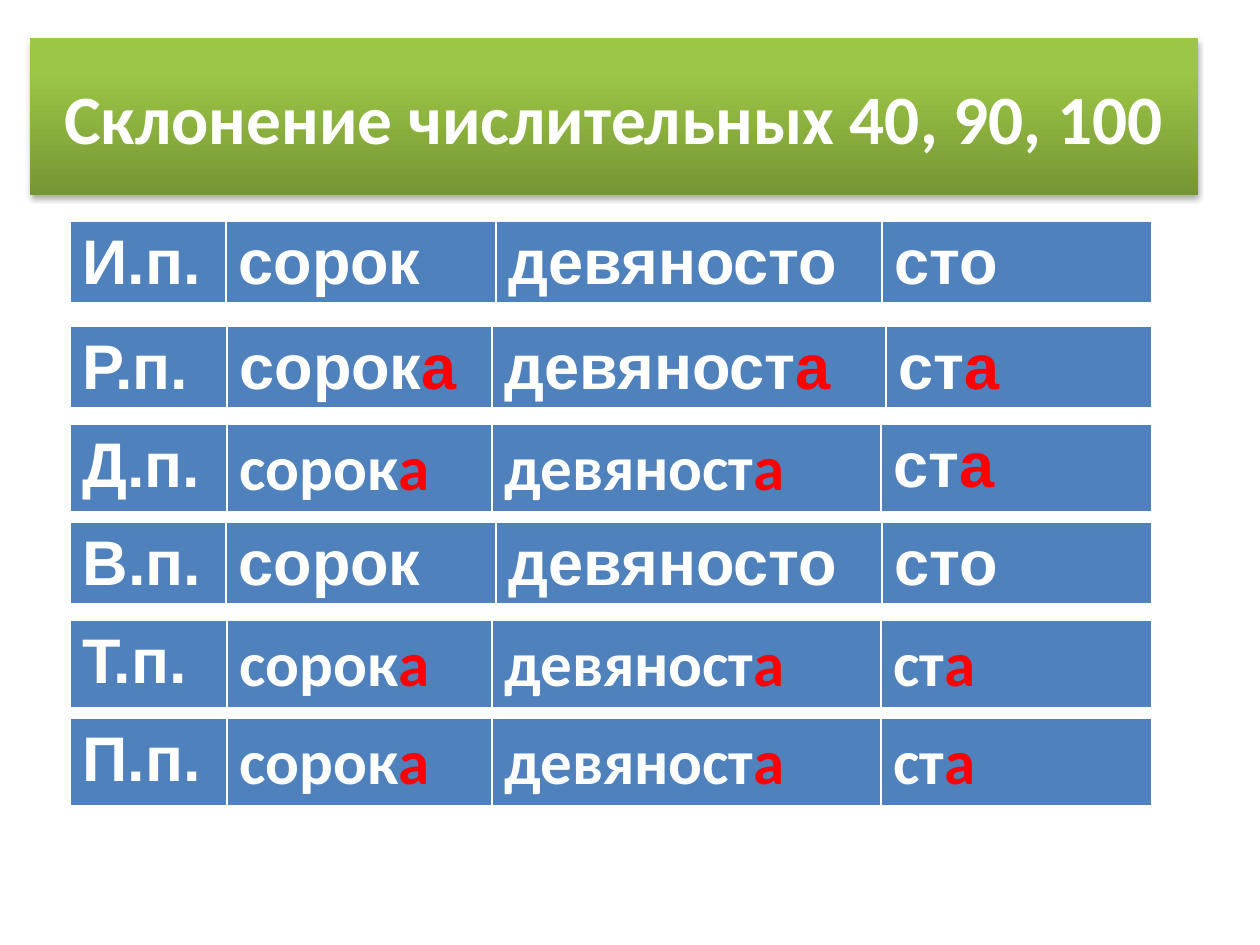
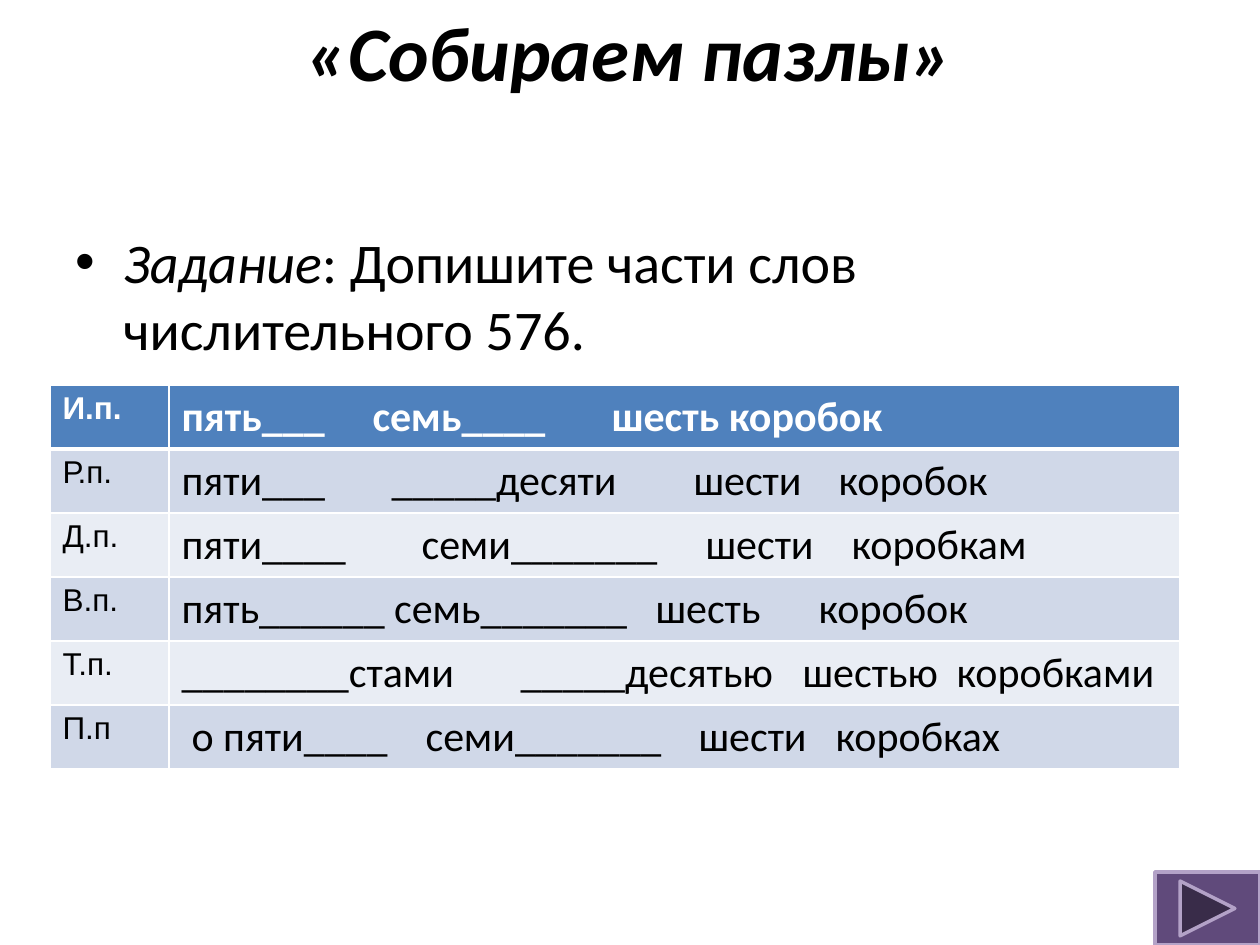
from lxml.etree import SubElement
from pptx import Presentation
from pptx.dml.color import RGBColor
from pptx.enum.shapes import MSO_SHAPE
from pptx.enum.text import MSO_ANCHOR, MSO_AUTO_SIZE, PP_ALIGN
from pptx.oxml.ns import qn
from pptx.util import Emu, Pt

EMU_PER_PX = 914400 / 126
TITLE_ONLY = 5
COLORS = {
    "text": "000000", "paper": "FFFFFF", "ending": "FF0000",
    "head": "4F81BD", "band_dark": "D0D8E8", "band_light": "E9EDF4",
    "title_top": "9CC746", "title_bottom": "769535",
    "button": "604A7B", "button_edge": "B3A2C7",
}


def px(length):
    return Emu(round(length * EMU_PER_PX))


def rgb(name):
    return RGBColor.from_string(COLORS[name])


def add_text(paragraph, text, size=36, font="Calibri", color="text", bold=False, italic=False):
    run = paragraph.add_run()
    run.text = text
    run.font.size = Pt(size)
    run.font.name = font
    run.font.color.rgb = rgb(color)
    run.font.bold = bold
    run.font.italic = italic


def set_border(cell, side, points):
    line = SubElement(cell._tc.get_or_add_tcPr(), qn(f"a:ln{side}"), w=str(Pt(points)))
    SubElement(SubElement(line, qn("a:solidFill")), qn("a:srgbClr"), val=COLORS["paper"])


def set_tabs(paragraph, stops):
    tabs = SubElement(paragraph._p.get_or_add_pPr(), qn("a:tabLst"))
    for stop in stops:
        SubElement(tabs, qn("a:tab"), pos=str(px(stop)), algn="l")


class Deck:
    def __init__(self):
        self.presentation = Presentation()
        self.presentation.slide_width = px(1260)
        self.presentation.slide_height = px(945)
        self.slide = None

    def new_slide(self):
        layout = self.presentation.slide_layouts[TITLE_ONLY]
        self.slide = self.presentation.slides.add_slide(layout)

    def title(self, text, left, top, width, height, **style):
        title = self.slide.shapes.title
        title.left, title.top, title.width, title.height = map(px, (left, top, width, height))
        frame = title.text_frame
        frame.word_wrap = True
        frame.auto_size = MSO_AUTO_SIZE.NONE
        frame.vertical_anchor = MSO_ANCHOR.MIDDLE
        frame.paragraphs[0].alignment = PP_ALIGN.CENTER
        add_text(frame.paragraphs[0], text, bold=True, **style)
        return title

    def title_band(self, title):
        title.fill.gradient()
        title.fill.gradient_angle = 270
        top, bottom = title.fill.gradient_stops
        top.color.rgb, top.position = rgb("title_top"), 0.2
        bottom.color.rgb, bottom.position = rgb("title_bottom"), 1
        title.shadow.inherit = False
        effects = title.element.spPr.find(qn("a:effectLst"))
        shadow = SubElement(effects, qn("a:outerShdw"), blurRad="40000", dist="23000",
                            dir="5400000", rotWithShape="0")
        black = SubElement(shadow, qn("a:srgbClr"), val=COLORS["text"])
        SubElement(black, qn("a:alpha"), val="35000")

    def bullet(self, parts, left, top, width, height):
        frame = self.slide.shapes.add_textbox(*map(px, (left, top, width, height))).text_frame
        frame.word_wrap = True
        paragraph = frame.paragraphs[0]
        properties = paragraph._p.get_or_add_pPr()
        properties.set("marL", str(px(48)))
        properties.set("indent", str(-px(48)))
        SubElement(properties, qn("a:buFont"), typeface="Arial")
        SubElement(properties, qn("a:buChar"), char="•")
        for text, italic in parts:
            add_text(paragraph, text, size=32, italic=italic)

    def table(self, left, top, widths, row_height, row_count):
        frame = self.slide.shapes.add_table(
            row_count, len(widths), px(left), px(top), px(sum(widths)), px(row_height * row_count))
        table = frame.table
        table.first_row = table.horz_banding = False
        for column, width in zip(table.columns, widths):
            column.width = px(width)
        return table

    def cell(self, cell, text, fill, bottom=1, tabs=(), **style):
        """Fill a cell; the part after a bar is an accented ending."""
        for side, points in zip("LRTB", (1, 1, 1, bottom)):
            set_border(cell, side, points)
        cell.fill.solid()
        cell.fill.fore_color.rgb = rgb(fill)
        paragraph = cell.text_frame.paragraphs[0]
        if tabs:
            set_tabs(paragraph, tabs)
        stem, _, ending = text.partition("|")
        add_text(paragraph, stem, **style)
        if ending:
            add_text(paragraph, ending, **{**style, "color": "ending"})

    def forward_button(self, left, top, width, height):
        button = self.slide.shapes.add_shape(
            MSO_SHAPE.ACTION_BUTTON_FORWARD_OR_NEXT, *map(px, (left, top, width, height)))
        button.shadow.inherit = False
        button.fill.solid()
        button.fill.fore_color.rgb = rgb("button")
        button.line.color.rgb = rgb("button_edge")
        button.line.width = Pt(2)


# Case name, forms of 40, 90 and 100, column widths, count of leading Arial cells, Arial in last cell
BASE_WIDTHS = (156, 270, 386, 270)
GENITIVE_WIDTHS = (157, 265, 394, 266)
OBLIQUE_WIDTHS = (157, 265, 389, 271)
BASE_FORMS = ("сорок", "девяносто", "сто")
OBLIQUE_FORMS = ("сорок|а", "девяност|а", "ст|а")
ALL_ARIAL = ("Arial",) * 4
NAME_ARIAL = ("Arial", "Calibri", "Calibri", "Calibri")
ENDS_ARIAL = ("Arial", "Calibri", "Calibri", "Arial")
DECLENSION = [
    ("И.п.", BASE_FORMS, BASE_WIDTHS, ALL_ARIAL),
    ("Р.п.", OBLIQUE_FORMS, GENITIVE_WIDTHS, ALL_ARIAL),
    ("Д.п.", OBLIQUE_FORMS, OBLIQUE_WIDTHS, ENDS_ARIAL),
    ("В.п.", BASE_FORMS, BASE_WIDTHS, ALL_ARIAL),
    ("Т.п.", OBLIQUE_FORMS, OBLIQUE_WIDTHS, NAME_ARIAL),
    ("П.п.", OBLIQUE_FORMS, OBLIQUE_WIDTHS, NAME_ARIAL),
]

# Case name, words to complete, tab stops between the words
PUZZLE = [
    ("И.п.", "пять___\tсемь____\tшесть коробок", (191, 430)),
    ("Р.п.", "пяти___\t_____десяти\tшести\tкоробок", (210, 512, 657)),
    ("Д.п.", "пяти____\tсеми_______\tшести\tкоробкам", (240, 524, 670)),
    ("В.п.", "пять______ семь_______\tшесть\tкоробок", (474, 637)),
    ("Т.п.", "________стами\t_____десятью\tшестью\tкоробками", (339, 621, 775)),
    ("П.п", "\tо пяти____\tсеми_______\tшести\tкоробках", (10, 244, 517, 654)),
]


def declension_slide(deck):
    deck.new_slide()
    title = deck.title("Склонение числительных 40, 90, 100", 30, 38, 1168, 157,
                       size=39.6, color="paper")
    deck.title_band(title)

    # One single-row table for each case
    for index, (case, forms, widths, fonts) in enumerate(DECLENSION):
        top = 228 + 98 * index if index else 221
        height = 87 if "Calibri" in fonts else 80
        row = deck.table(70, top, widths, height, 1)
        for column, (text, font) in enumerate(zip((case, *forms), fonts)):
            deck.cell(row.cell(0, column), text, "head", bottom=3,
                      font=font, color="paper", bold=True)


def puzzle_slide(deck):
    deck.new_slide()
    title = deck.title("«Собираем пазлы»", 63, 38, 1134, 119, size=44, italic=True)
    title.text_frame.margin_bottom = px(100)
    deck.bullet([("Задание", True), (": Допишите части слов числительного 576.", False)],
                63, 221, 1134, 624)

    # Words with gaps to complete
    cases = deck.table(50, 385, (119, 1011), 64, len(PUZZLE))
    for row, (case, words, tabs) in enumerate(PUZZLE):
        if row == 0:
            look = {"fill": "head", "bottom": 3, "color": "paper", "bold": True}
        else:
            look = {"fill": "band_dark" if row % 2 else "band_light"}
        deck.cell(cases.cell(row, 0), case, size=18, font="Arial", **look)
        deck.cell(cases.cell(row, 1), words, size=24, tabs=tabs, **look)

    deck.forward_button(1155, 872, 105, 73)


def main():
    deck = Deck()
    declension_slide(deck)
    puzzle_slide(deck)
    deck.presentation.save("out.pptx")


if __name__ == "__main__":
    main()
